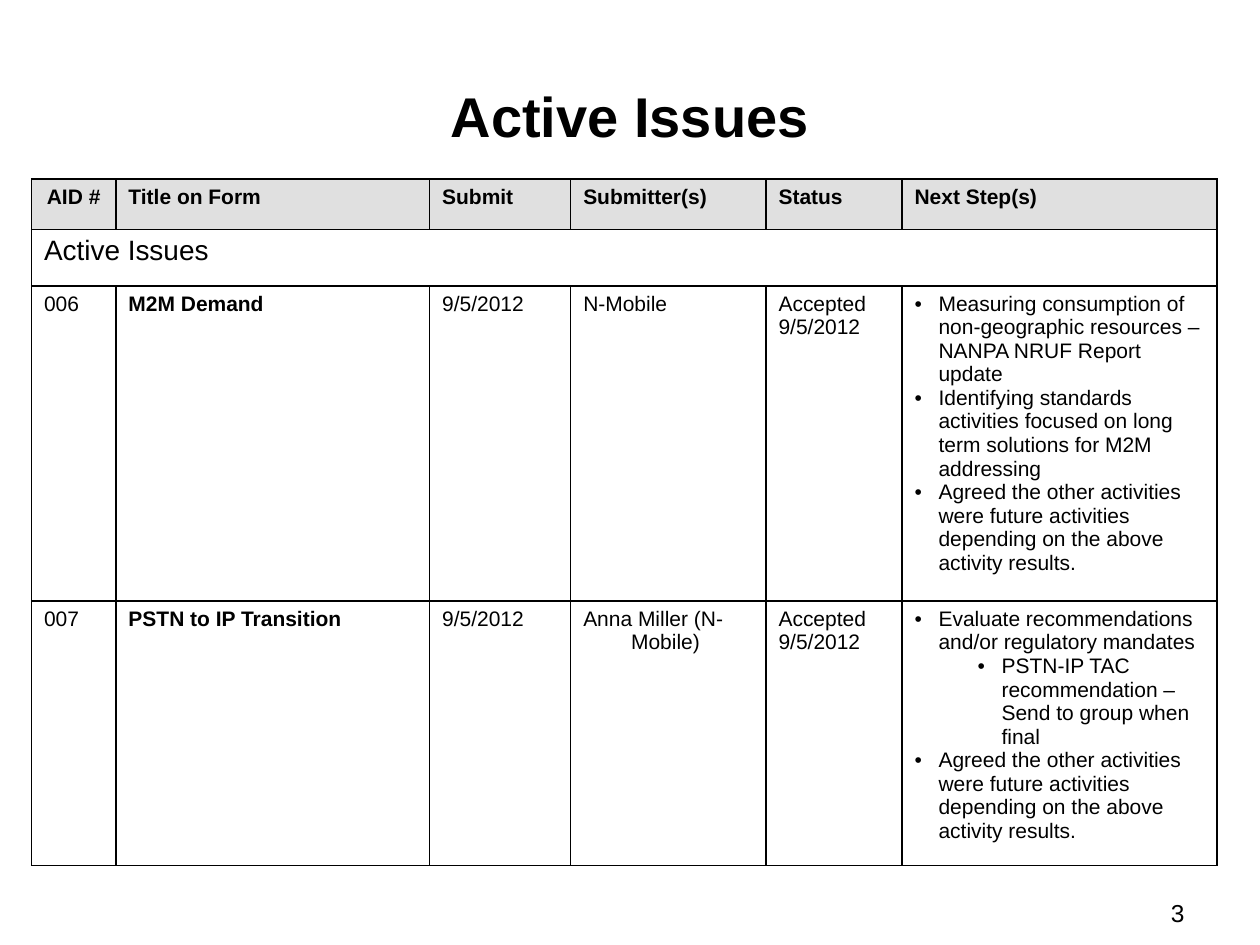
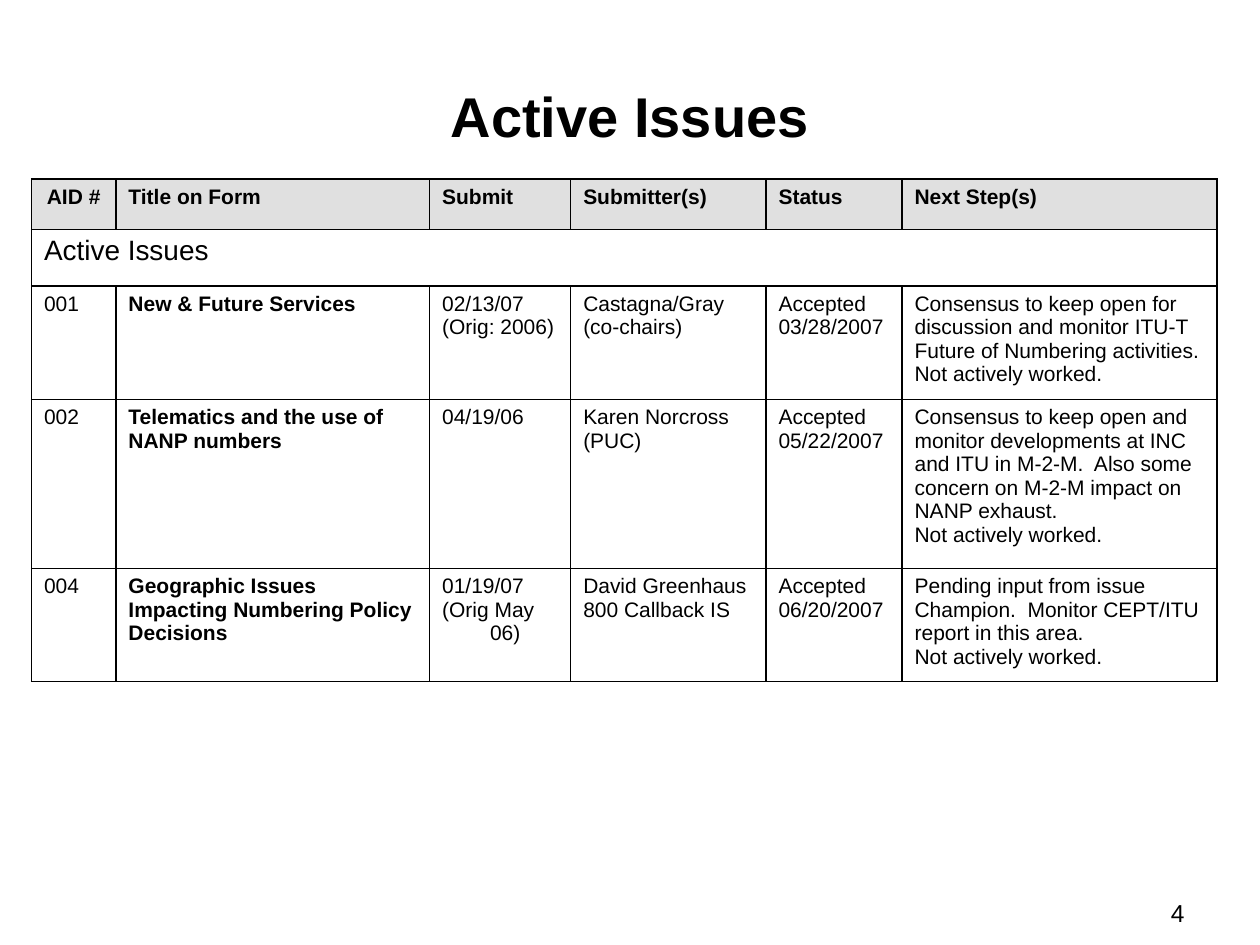
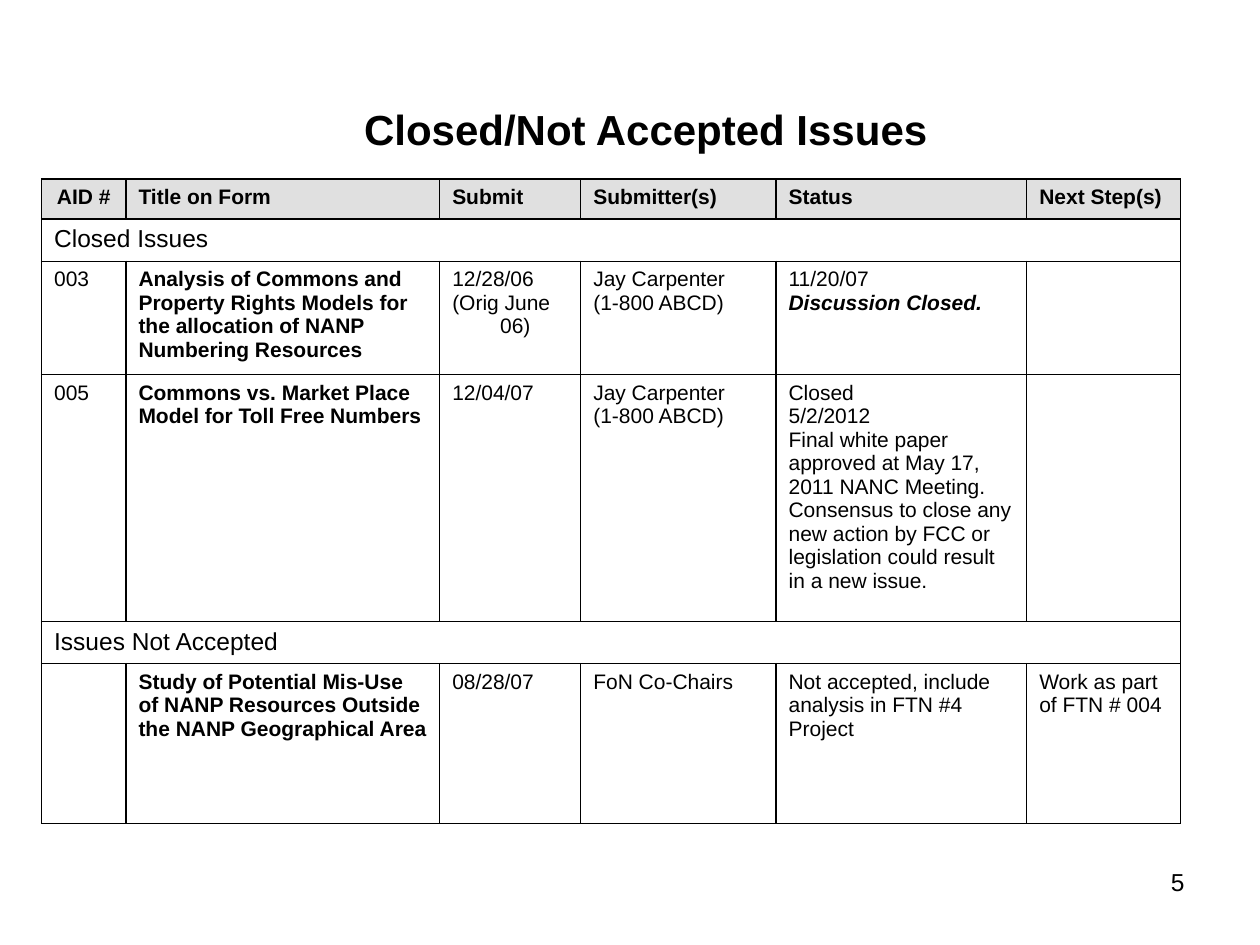
"""Build three slides that list active and closed numbering issues."""
from lxml.etree import SubElement
from pptx import Presentation
from pptx.dml.color import RGBColor
from pptx.enum.text import MSO_ANCHOR as Anchor, PP_ALIGN as Align
from pptx.oxml.ns import qn
from pptx.util import Inches, Pt

COLORS = {"text": "000000", "border": "000000", "header": "E0E0E0"}
FONT = "Arial"
HANG = 0.38
BULLET_HANG = 0.19
HEADINGS = ["AID #", "Title on Form", "Submit", "Submitter(s)", "Status", "Next Step(s)"]
TITLE_COLUMN = 1
HANGING_COLUMNS = (0, 2, 3)
ACTIVE_WIDTHS = [0.67, 2.49, 1.12, 1.55, 1.08, 2.5]
CLOSED_WIDTHS = [0.67, 2.49, 1.12, 1.55, 1.99, 1.22]
FUTURE_STEP = ("Agreed the other activities were future activities "
               "depending on the above activity results.")


def bullet(text, left=BULLET_HANG):
    """Describe a bulleted line."""
    return {"text": text, "left": left, "hang": BULLET_HANG, "mark": "•"}


def write_line(para, text, size=12, bold=False, italic=False, align=Align.LEFT,
               left=0, hang=0, mark=None):
    """Write one formatted line into a paragraph."""
    para.alignment = align
    properties = para._p.get_or_add_pPr()
    properties.set("marL", str(Inches(left)))
    properties.set("indent", str(-Inches(hang)))
    if mark:
        SubElement(properties, qn("a:buFont"), typeface=FONT)
        SubElement(properties, qn("a:buChar"), char=mark)
    span = para.add_run()
    span.text = text
    span.font.name = FONT
    span.font.size = Pt(size)
    span.font.bold = bold
    span.font.italic = italic
    span.font.color.rgb = RGBColor.from_string(COLORS["text"])


class IssueDeck:
    """Hold the deck, its style and the current page."""

    def __init__(self):
        """Start an empty deck."""
        self.deck = Presentation()
        self.deck.slide_width = Inches(10)
        self.deck.slide_height = Inches(7.5)
        self.page = None

    def add_page(self, title, number, area, size, title_inset=0.05, number_top=7.08,
                 number_height=0.27):
        """Add a page with its title and number."""
        self.page = self.deck.slides.add_slide(self.deck.slide_layouts[5])
        heading = self.page.shapes.title
        heading.left, heading.top, heading.width, heading.height = map(Inches, area)
        frame = heading.text_frame
        frame.margin_top = Inches(title_inset)
        frame.vertical_anchor = Anchor.MIDDLE
        write_line(frame.paragraphs[0], title, size=size, bold=True, align=Align.CENTER)
        box = self.page.shapes.add_textbox(Inches(7.17), Inches(number_top),
                                           Inches(2.33), Inches(number_height))
        box.text_frame.word_wrap = True
        write_line(box.text_frame.paragraphs[0], str(number), size=14, align=Align.RIGHT)

    def add_cell(self, cell, lines, fill=None, **style):
        """Border, fill and write one table cell."""
        properties = cell._tc.get_or_add_tcPr()
        for side in ("a:lnL", "a:lnR", "a:lnT", "a:lnB"):
            line = SubElement(properties, qn(side), w=str(Pt(1)))
            solid = SubElement(line, qn("a:solidFill"))
            SubElement(solid, qn("a:srgbClr"), val=COLORS["border"])
        if fill:
            cell.fill.solid()
            cell.fill.fore_color.rgb = RGBColor.from_string(fill)
        else:
            cell.fill.background()
        frame = cell.text_frame
        for index, line in enumerate(lines):
            para = frame.add_paragraph() if index else frame.paragraphs[0]
            options = line if isinstance(line, dict) else {"text": line}
            write_line(para, **{**style, **options})

    def add_issues(self, left, widths, heights, rows, section_size):
        """Add an issue table; a plain string row is a section band."""
        frame = self.page.shapes.add_table(len(heights), len(widths), Inches(left),
                                           Inches(1.42), Inches(sum(widths)),
                                           Inches(sum(heights)))
        table = frame.table
        table.first_row = table.horz_banding = False
        for column, width in zip(table.columns, widths):
            column.width = Inches(width)
        for row, height in zip(table.rows, heights):
            row.height = Inches(height)
        for index, text in enumerate(HEADINGS):
            self.add_cell(table.cell(0, index), [text], COLORS["header"], bold=True,
                          left=HANG, hang=HANG,
                          align=Align.LEFT if index else Align.CENTER)
        for number, row in enumerate(rows, 1):
            if isinstance(row, str):
                table.cell(number, 0).merge(table.cell(number, len(widths) - 1))
                for index in range(len(widths)):
                    self.add_cell(table.cell(number, index), [] if index else [row],
                                  size=section_size)
                continue
            for index, content in enumerate(row):
                lines = content.split("\n") if isinstance(content, str) else content
                indent = HANG if index in HANGING_COLUMNS else 0
                self.add_cell(table.cell(number, index), lines if content else [],
                              bold=index == TITLE_COLUMN, left=indent, hang=indent)


def main():
    """Build and save the deck."""
    issues = IssueDeck()
    active_pages = [
        (3, [0.4, 0.45, 2.34, 1.97], [
            "Active Issues",
            ["006", "M2M Demand", "9/5/2012", "N-Mobile", "Accepted 9/5/2012", [
                bullet("Measuring consumption of non-geographic resources – "
                       "NANPA NRUF Report update"),
                bullet("Identifying standards activities focused on long term "
                       "solutions for M2M addressing"),
                bullet(FUTURE_STEP)]],
            ["007", "PSTN to IP Transition", "9/5/2012", "Anna Miller (N-Mobile)",
             "Accepted 9/5/2012", [
                 bullet("Evaluate recommendations and/or regulatory mandates"),
                 bullet("PSTN-IP TAC recommendation – Send to group when final", 0.69),
                 bullet(FUTURE_STEP)]],
        ]),
        (4, [0.4, 0.45, 0.85, 1.34, 0.85], [
            "Active Issues",
            ["001", "New & Future Services", "02/13/07\n(Orig: 2006)",
             "Castagna/Gray\n(co-chairs)", "Accepted\n03/28/2007",
             "Consensus to keep open for discussion and monitor ITU-T Future of "
             "Numbering activities. Not actively worked."],
            ["002", "Telematics and the use of NANP numbers", "04/19/06",
             "Karen Norcross\n(PUC)", "Accepted\n05/22/2007",
             "Consensus to keep open and monitor developments at INC and ITU in "
             "M-2-M.  Also some concern on M-2-M impact on NANP exhaust.\n"
             "Not actively worked."],
            ["004", "Geographic Issues Impacting Numbering Policy Decisions",
             "01/19/07\n(Orig May 06)", "David Greenhaus\n800 Callback IS",
             "Accepted\n06/20/2007",
             "Pending input from issue Champion.  Monitor CEPT/ITU report in this "
             "area.\nNot actively worked."],
        ]),
    ]
    for number, heights, rows in active_pages:
        issues.add_page("Active Issues", number, (0.5, 0.42, 9, 0.83), 32, title_inset=0.2)
        issues.add_issues(0.25, ACTIVE_WIDTHS, heights, rows, section_size=16)

    issues.add_page("Closed/Not Accepted Issues", 5, (0.5, 0.67, 9.25, 0.7), 24,
                    number_top=6.83, number_height=0.52)
    issues.add_issues(0.33, CLOSED_WIDTHS, [0.32, 0.32, 0.9, 1.96, 0.32, 1.27], [
        "Closed Issues",
        ["003", "Analysis of Commons and Property Rights Models for the allocation "
         "of NANP Numbering Resources", "12/28/06\n(Orig June 06)",
         "Jay Carpenter\n(1-800 ABCD)",
         ["11/20/07", {"text": "Discussion Closed.", "bold": True, "italic": True}], ""],
        ["005", "Commons vs. Market Place Model for Toll Free Numbers", "12/04/07",
         "Jay Carpenter\n(1-800 ABCD)",
         "Closed\n5/2/2012\nFinal white paper approved at May 17, 2011 NANC Meeting. "
         "Consensus to close any new action by FCC or legislation could result in a "
         "new issue.", ""],
        "Issues Not Accepted",
        ["", "Study of Potential Mis-Use of NANP Resources Outside the NANP "
         "Geographical Area", "08/28/07", "FoN Co-Chairs",
         "Not accepted, include analysis in FTN #4 Project",
         "Work as part of FTN # 004"],
    ], section_size=14)
    issues.deck.save("out.pptx")


if __name__ == "__main__":
    main()
